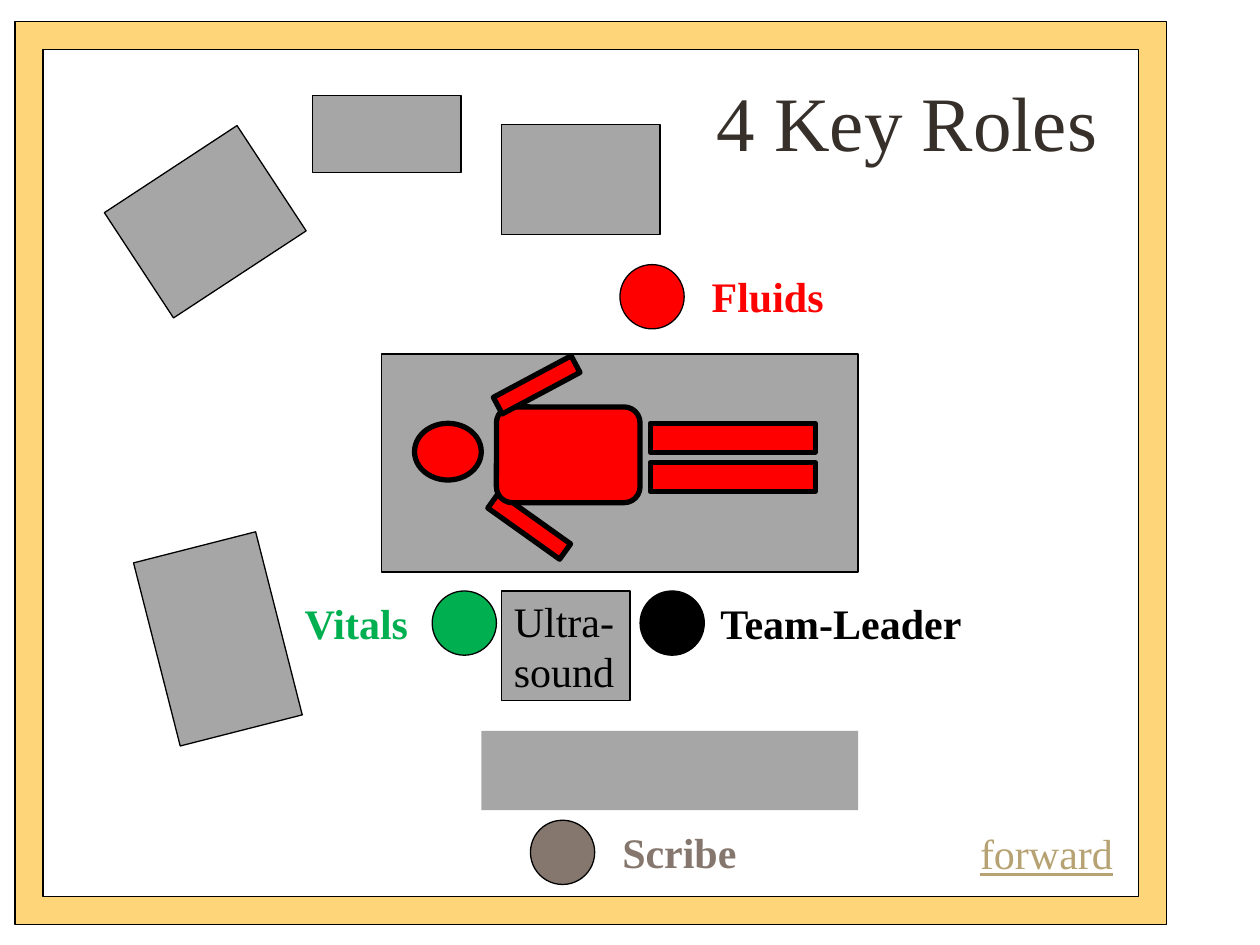
from dataclasses import dataclass

from lxml.etree import SubElement
from pptx import Presentation
from pptx.dml.color import RGBColor as Rgb
from pptx.enum.shapes import MSO_SHAPE as Geo
from pptx.enum.text import MSO_ANCHOR as Anchor, PP_ALIGN as Align
from pptx.util import Inches, Pt


@dataclass(frozen=True)
class Theme:
    font: str = "Times New Roman"
    gold: str = "FFD579"
    grey: str = "A6A6A6"
    red: str = "FF0000"
    green: str = "00B050"
    black: str = "000000"
    brown: str = "85776D"
    dark: str = "37302A"
    tan: str = "B6A272"
    head: int = 44
    body: int = 24
    thin: float = 0.75
    thick: float = 3


THEME = Theme()


def draw(slide, geo, box, fill, line=THEME.thin, turn=0):
    """Add a filled shape; a line of 0 means no outline."""
    shape = slide.shapes.add_shape(geo, *map(Inches, box))
    shape.shadow.inherit = False
    shape.rotation = turn
    shape.fill.solid()
    shape.fill.fore_color.rgb = Rgb.from_string(fill)
    if line:
        shape.line.width = Pt(line)
        shape.line.color.rgb = Rgb.from_string(THEME.black)
    else:
        shape.line.fill.background()
    return shape


def write(para, text, color, size=THEME.body, bold=False, under=False):
    run = para.add_run()
    run.text = text
    font = run.font
    font.name, font.size = THEME.font, Pt(size)
    font.bold, font.underline = bold, under
    font.color.rgb = Rgb.from_string(color)


def label(slide, box, text, color, **style):
    frame = slide.shapes.add_textbox(*map(Inches, box)).text_frame
    frame.word_wrap = False
    write(frame.paragraphs[0], text, color, **style)


def title(slide, box, text):
    head = slide.shapes.title
    head.left, head.top, head.width, head.height = map(Inches, box)
    frame = head.text_frame
    frame.word_wrap = True
    frame.vertical_anchor = Anchor.MIDDLE
    para = frame.paragraphs[0]
    para.alignment = Align.CENTER
    write(para, text, THEME.dark, THEME.head)


def border(slide, box):
    edge = draw(slide, Geo.FRAME, box, THEME.gold)
    edge.adjustments[0] = 0.031


def patient(slide, box):
    """Draw the bed with the patient lying on it."""
    left, top, _, _ = box
    draw(slide, Geo.RECTANGLE, box, THEME.grey)

    def limb(geo, x, y, wide, high, turn=0):
        draw(slide, geo, (left + x, top + y, wide, high),
             THEME.red, THEME.thick, turn)

    limb(Geo.OVAL, 0.26, 0.55, 0.53, 0.45)
    for y in (0.55, 0.86):
        limb(Geo.RECTANGLE, 2.13, y, 1.31, 0.23)
    limb(Geo.RECTANGLE, 0.82, 1.29, 0.7, 0.15, 35.5)
    limb(Geo.ROUNDED_RECTANGLE, 0.91, 0.42, 1.14, 0.76)
    limb(Geo.RECTANGLE, 0.88, 0.17, 0.7, 0.15, 331.9)


def room(slide):
    """Place the grey furniture around the bed."""
    for box, turn in (
        ((3.98, 0.99, 1.26, 0.87), 0),
        ((1, 1.26, 1.26, 1), 326.7),
        ((0.98, 4.57, 1.5, 1), 255.7),
        ((2.48, 0.76, 1.18, 0.61), 0),
    ):
        draw(slide, Geo.RECTANGLE, box, THEME.grey, turn=turn)
    draw(slide, Geo.RECTANGLE, (3.82, 5.8, 2.99, 0.63), THEME.grey, 0)


def device(slide, box, lines):
    frame = draw(slide, Geo.RECTANGLE, box, THEME.grey).text_frame
    frame.word_wrap = True
    frame.vertical_anchor = Anchor.MIDDLE
    for i, text in enumerate(lines):
        para = frame.add_paragraph() if i else frame.paragraphs[0]
        para.alignment = Align.LEFT
        write(para, text, THEME.black)


def role(slide, box, name, color, shift, wide):
    """Draw a person as a dot, with the name shifted sideways from it."""
    left, top, _, _ = box
    draw(slide, Geo.OVAL, box, color)
    label(slide, (left + shift, top, wide, 0.5), name, color, bold=True)


def main():
    deck = Presentation()
    deck.slide_width, deck.slide_height = Inches(10), Inches(7.5)
    slide = deck.slides.add_slide(deck.slide_layouts[5])
    border(slide, (0.12, 0.17, 9.14, 7.17))
    title(slide, (5.47, 0.52, 3.46, 0.88), "4 Key Roles")
    patient(slide, (3.03, 2.81, 3.78, 1.73))
    room(slide)
    device(slide, (3.98, 4.69, 1.02, 0.87), ("Ultra-", "sound"))
    dot = 0.51
    for x, y, name, color, shift, wide in (
        (4.92, 2.1, "Fluids", THEME.red, 0.63, 1.1),
        (3.43, 4.69, "Vitals", THEME.green, -1.11, 1.03),
        (5.08, 4.69, "Team-Leader", THEME.black, 0.54, 2.13),
        (4.21, 6.51, "Scribe", THEME.brown, 0.63, 1.12),
    ):
        role(slide, (x, y, dot, dot), name, color, shift, wide)
    label(slide, (7.68, 6.52, 1.27, 0.5), "forward", THEME.tan, under=True)
    deck.save("out.pptx")


if __name__ == "__main__":
    main()
